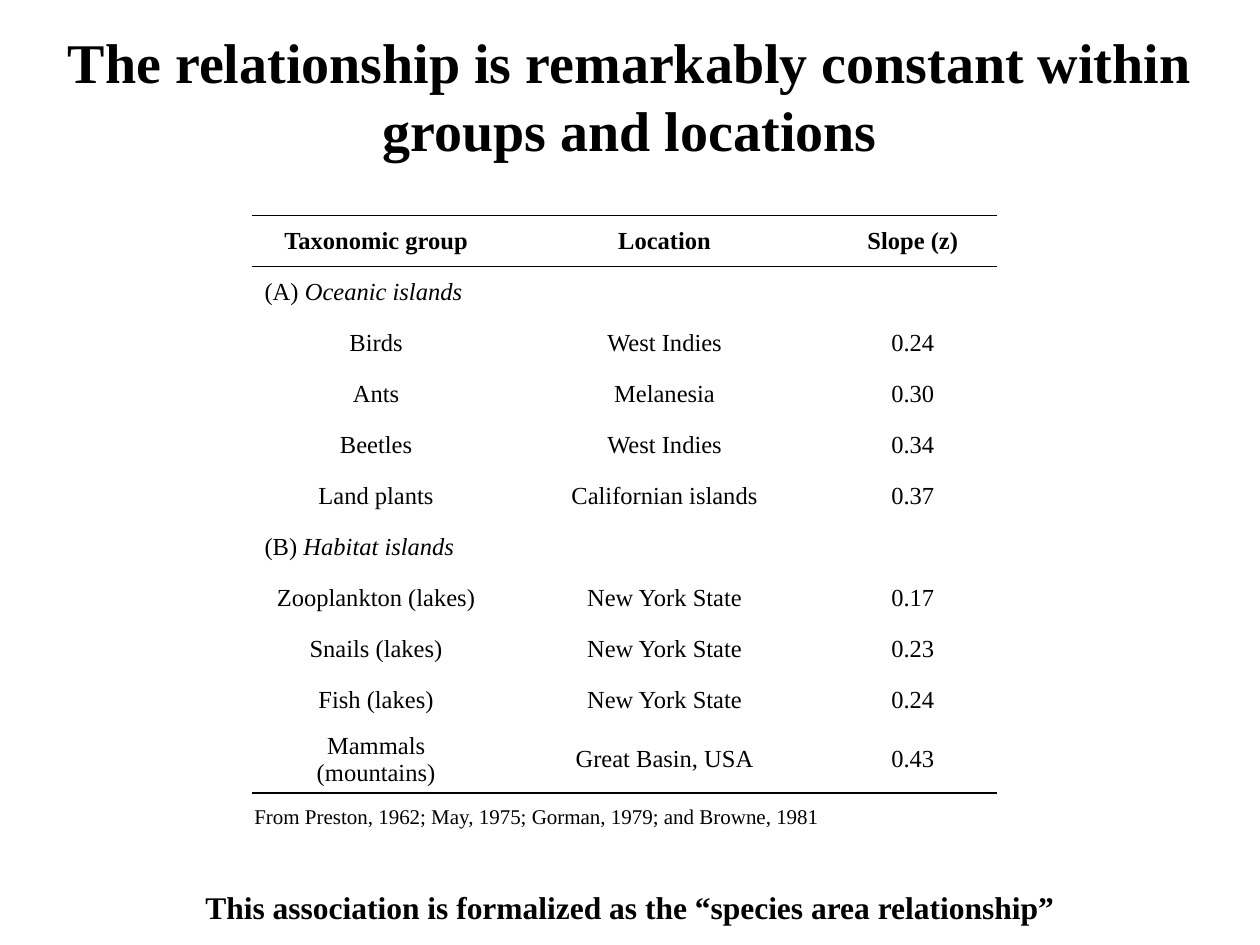
from dataclasses import dataclass

from lxml import etree
from pptx import Presentation
from pptx.dml.color import RGBColor
from pptx.enum.text import MSO_ANCHOR, PP_ALIGN
from pptx.oxml.ns import qn
from pptx.util import Inches, Pt

LEFT, CENTER = PP_ALIGN.LEFT, PP_ALIGN.CENTER
MIDDLE = MSO_ANCHOR.MIDDLE
FONT = "Times New Roman"
COLORS = {"ink": "000000"}
SLIDE_WIDTH, SLIDE_HEIGHT = Inches(10), Inches(7.5)
BLANK_LAYOUT = 6

TABLE_LEFT, TABLE_TOP, TABLE_HEIGHT = Inches(2), Inches(1.71), Inches(4.46)
COLUMN_WIDTHS = (1.97, 2.61, 1.33)
RULE_WIDTH = Pt(1)


@dataclass(frozen=True)
class Caption:
    text: str
    left: float
    top: float
    width: float
    height: float
    size: int
    bold: bool = True
    align: PP_ALIGN = CENTER
    wrap: bool = True


@dataclass(frozen=True)
class Section:
    label: str
    name: str
    records: tuple


CAPTIONS = (
    Caption("The relationship is remarkably constant within groups and locations",
            0, 0.023, 1, 0.157, 32),
    Caption("From Preston, 1962; May, 1975; Gorman, 1979; and Browne, 1981",
            0.192, 0.844, 0.473, 0.04, 12, bold=False, align=LEFT, wrap=False),
    Caption("This association is formalized as the “species area relationship”",
            0, 0.933, 1, 0.054, 18),
)
HEADINGS = ("Taxonomic group", "Location", "Slope (z)")
SECTIONS = (
    Section("(A) ", "Oceanic islands", (
        ("Birds", "West Indies", "0.24"),
        ("Ants", "Melanesia", "0.30"),
        ("Beetles", "West Indies", "0.34"),
        ("Land plants", "Californian islands", "0.37"),
    )),
    Section("(B) ", "Habitat islands", (
        ("Zooplankton (lakes)", "New York State", "0.17"),
        ("Snails (lakes)", "New York State", "0.23"),
        ("Fish (lakes)", "New York State", "0.24"),
        ("Mammals (mountains)", "Great Basin, USA", "0.43"),
    )),
)


def write(para, text: str, *, size: int = 14, bold: bool = False,
          italic: bool = False, align: PP_ALIGN = CENTER) -> None:
    para.alignment = align
    span = para.add_run()
    span.text = text
    span.font.name = FONT
    span.font.size = Pt(size)
    span.font.bold = bold
    span.font.italic = italic
    span.font.color.rgb = RGBColor.from_string(COLORS["ink"])


def add_caption(page, caption: Caption) -> None:
    box = page.shapes.add_textbox(
        int(caption.left * SLIDE_WIDTH), int(caption.top * SLIDE_HEIGHT),
        int(caption.width * SLIDE_WIDTH), int(caption.height * SLIDE_HEIGHT))
    box.text_frame.word_wrap = caption.wrap
    write(box.text_frame.paragraphs[0], caption.text, size=caption.size,
          bold=caption.bold, align=caption.align)


def style_cell(cell, ruled_sides: set) -> None:
    cell.vertical_anchor = MIDDLE
    properties = cell._tc.get_or_add_tcPr()
    for side in ("lnL", "lnR", "lnT", "lnB"):
        line = etree.SubElement(properties, qn(f"a:{side}"), w=str(RULE_WIDTH))
        if side in ruled_sides:
            fill = etree.SubElement(line, qn("a:solidFill"))
            etree.SubElement(fill, qn("a:srgbClr"), val=COLORS["ink"])
        else:
            etree.SubElement(line, qn("a:noFill"))
    cell.fill.background()


def add_slope_table(page) -> None:
    rows = [HEADINGS]
    for section in SECTIONS:
        rows += [section, *section.records]
    count = len(rows)
    table = page.shapes.add_table(
        count, len(HEADINGS), TABLE_LEFT, TABLE_TOP,
        Inches(sum(COLUMN_WIDTHS)), TABLE_HEIGHT).table
    table.first_row = table.horz_banding = False
    for column, width in zip(table.columns, COLUMN_WIDTHS):
        column.width = Inches(width)

    ruled_edges = {0, 1, count}
    for index, content in enumerate(rows):
        table.rows[index].height = TABLE_HEIGHT // count
        sides = {side for side, edge in (("lnT", index), ("lnB", index + 1))
                 if edge in ruled_edges}
        cells = list(table.rows[index].cells)
        for cell in cells:
            style_cell(cell, sides)
        if isinstance(content, Section):
            para = cells[0].text_frame.paragraphs[0]
            write(para, content.label, align=LEFT)
            write(para, content.name, italic=True, align=LEFT)
        else:
            for cell, text in zip(cells, content):
                write(cell.text_frame.paragraphs[0], text, bold=index == 0)


def main() -> None:
    deck = Presentation()
    deck.slide_width, deck.slide_height = SLIDE_WIDTH, SLIDE_HEIGHT
    page = deck.slides.add_slide(deck.slide_layouts[BLANK_LAYOUT])
    add_slope_table(page)
    for caption in CAPTIONS:
        add_caption(page, caption)
    deck.save("out.pptx")


if __name__ == "__main__":
    main()
